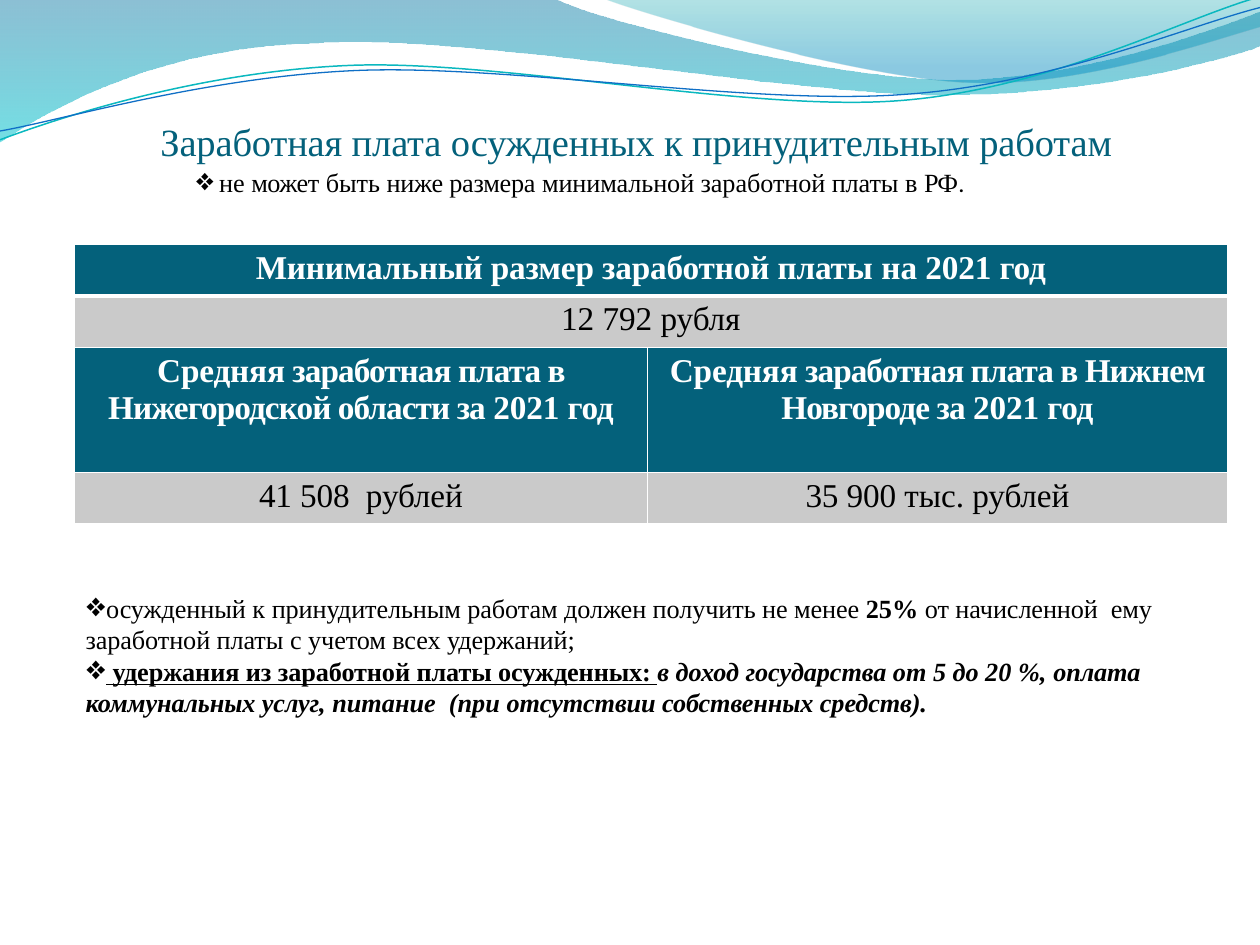
from dataclasses import dataclass, field
from typing import NamedTuple

import pptx
import pptx.dml.color
import pptx.enum.text
import pptx.oxml
import pptx.oxml.ns
import pptx.util

Inches, Pt = pptx.util.Inches, pptx.util.Pt
RGB = pptx.dml.color.RGBColor.from_string
qn = pptx.oxml.ns.qn
NAMESPACE = pptx.oxml.ns.nsdecls("a")
ALIGN = pptx.enum.text.PP_ALIGN
ANCHOR = pptx.enum.text.MSO_ANCHOR


@dataclass(frozen=True)
class Theme:
    font: str = "Times New Roman"
    stop_font: str = "Roboto"
    ink: str = "000000"
    accent: str = "04617B"
    value_fill: str = "CACACA"
    white: str = "FFFFFF"
    title_size: float = 22
    table_size: float = 19
    body_size: float = 15


THEME = Theme()


class Run(NamedTuple):
    text: str
    tracking: float = -0.05
    format: dict = {}


@dataclass(frozen=True)
class Paragraph:
    runs: list[Run]
    size: float = THEME.body_size
    color: str = THEME.ink
    align: ALIGN = ALIGN.LEFT
    space_before: float = 0
    margin: float = 0.01
    indent: float = 0
    bullet_scale: int = 0


class Stop(NamedTuple):
    position: float
    color: str
    opacity: int


@dataclass(frozen=True)
class Wave:
    """Segments hold either one line end or three Bezier points."""
    start: tuple
    segments: list[tuple]
    stops: list[Stop] = field(default_factory=list)
    line: tuple = ()


@dataclass(frozen=True)
class TableCell:
    row: int
    column: int
    runs: list[Run]
    header: bool = False
    span: int = 1


WAVES = [
    Wave((0, 0), [
        (4.4, -0.01), (4.76, 0.17, 6.64, 0.63, 7.58, 0.63),
        (8.53, 0.63, 9.58, 0.26, 10, 0.09), (10.01, 0.36),
        (9.83, 0.44, 8.7, 0.76, 7.46, 0.75), (6.22, 0.75, 3.82, 0.28, 2.57, 0.34),
        (1.29, 0.36, 0.46, 0.83, -0.01, 1.13), (0, 0)],
        stops=[Stop(0, "0074A1", 45), Stop(1, "00C6CF", 55)]),
    Wave((4.79, -0.01), [
        (5.09, 0.11, 6.82, 0.62, 7.69, 0.65), (8.56, 0.69, 9.61, 0.32, 10, 0.21),
        (10, 0), (4.79, -0.01)],
        stops=[Stop(0, "00A1A9", 30), Stop(0.8, "008BBF", 45)]),
    Wave((0, 1.11), [
        (0.48, 0.93, 1.58, 0.57, 2.77, 0.52), (3.95, 0.47, 5.93, 0.89, 7.13, 0.8),
        (8.33, 0.71, 9.38, 0.15, 9.98, -0.02)], line=("0AB8BF", 0.85)),
    Wave((0, 1.04), [
        (0.47, 0.96, 1.64, 0.61, 2.83, 0.56), (4.03, 0.51, 5.97, 0.84, 7.17, 0.75),
        (8.36, 0.67, 9.41, 0.21, 10, 0.06)], line=("0F6FC6", 0.75)),
]

BOLD = {"bold": True}
BOLD_ITALIC = {"bold": True, "italic": True}
TITLE = Paragraph([Run("Заработная плата осужденных к принудительным работам")],
                  THEME.title_size, THEME.accent, ALIGN.CENTER, 0.9)
MINIMUM_RULE = Paragraph([
    Run("не "), Run("может", -0.25), Run(" быть "), Run("ниже размера ", -0.15),
    Run("минимальной заработной платы "), Run("в ", 0), Run("РФ", -0.55),
    Run(".", -0.55, {"name": THEME.stop_font})],
    space_before=1, margin=0.2, indent=-0.19, bullet_scale=93)
DEDUCTIONS = [
    Paragraph([
        Run("осужденный "), Run("к ", 0),
        Run("принудительным работам должен получить не менее "), Run("25% ", 0, BOLD),
        Run("от начисленной  ему заработной платы"), Run(" с", 0),
        Run(" учетом всех удержаний;")], space_before=1, bullet_scale=100),
    Paragraph([
        Run(" ", format={"underline": True}),
        Run("удержания из заработной платы осужденных: ", format=BOLD | {"underline": True}),
        Run("в ", 0, BOLD_ITALIC), Run("доход государства ", format=BOLD_ITALIC),
        Run("от 5 ", 0, BOLD_ITALIC), Run("до ", format=BOLD_ITALIC),
        Run("20 ", 0, BOLD_ITALIC), Run("%, ", 0.05, BOLD_ITALIC),
        Run("оплата  коммунальных услуг, ", format=BOLD_ITALIC),
        Run("питание  (при ", 0, BOLD_ITALIC),
        Run("отсутствии собственных средств).", format=BOLD_ITALIC)], bullet_scale=100),
]

YEAR = [Run("2021 "), Run("год", -0.15)]
COLUMN_WIDTHS = (4.55, 4.6)
ROW_HEIGHTS = (0.41, 0.41, 0.99, 0.41)
WAGES = [
    TableCell(0, 0, [Run("Минимальный размер заработной платы "), Run("на ", 0), *YEAR], True, 2),
    TableCell(1, 0, [Run("12 792 ", 0), Run("рубля")], span=2),
    TableCell(2, 0, [Run("Средняя"),
                     Run(" заработная плата в Нижегородской области за ", -0.5), *YEAR], True),
    TableCell(2, 1, [Run("Средняя"),
                     Run(" заработная плата в Нижнем Новгороде за ", -0.5), *YEAR], True),
    TableCell(3, 0, [Run("41 508  рублей")]),
    TableCell(3, 1, [Run("35 900 "), Run("тыс.", 0), Run(" рублей")]),
]


def element(markup: str):
    """Parse one drawing element, adding the namespace to its first tag."""
    tag, rest = markup[1:].split(">", 1)
    slash = "/" if tag.endswith("/") else ""
    return pptx.oxml.parse_xml(f"<{tag.rstrip('/')} {NAMESPACE}{slash}>{rest}")


def add_wave_outline(slide, wave: Wave):
    """Lay out the segment ends as a freeform, then bend its curved segments."""
    builder = slide.shapes.build_freeform(*map(Inches, wave.start), scale=1.0)
    ends = [tuple(map(Inches, segment[-2:])) for segment in wave.segments]
    builder.add_line_segments(ends, close=bool(wave.stops))
    ribbon = builder.convert_to_shape()
    straight_parts = list(ribbon._element.spPr.iter(qn("a:lnTo")))
    for straight, segment in zip(straight_parts, wave.segments):
        if len(segment) == 6:
            points = "".join(
                f'<a:pt x="{Inches(x) - ribbon.left}" y="{Inches(y) - ribbon.top}"/>'
                for x, y in zip(segment[::2], segment[1::2]))
            straight.getparent().replace(
                straight, element(f"<a:cubicBezTo>{points}</a:cubicBezTo>"))
    return ribbon


def draw_wave(slide, wave: Wave) -> None:
    ribbon = add_wave_outline(slide, wave)
    ribbon.shadow.inherit = False
    if wave.line:
        ribbon.fill.background()
        color, width = wave.line
        ribbon.line.color.rgb = RGB(color)
        ribbon.line.width = Pt(width)
        return
    ribbon.line.fill.background()
    ribbon.fill.gradient()
    ribbon.fill.gradient_angle = 270
    for gradient_stop, stop in zip(ribbon.fill.gradient_stops, wave.stops):
        gradient_stop.position = stop.position
        gradient_stop.color.rgb = RGB(stop.color)
    for color, stop in zip(ribbon._element.spPr.iter(qn("a:srgbClr")), wave.stops):
        color.append(element(f'<a:alpha val="{stop.opacity * 1000}"/>'))


def write_paragraph(target, content: Paragraph) -> None:
    target.alignment = content.align
    target.space_before = Pt(content.space_before)
    properties = target._p.get_or_add_pPr()
    properties.set("marL", str(Inches(content.margin)))
    properties.set("indent", str(Inches(content.indent)))
    if content.bullet_scale:
        for markup in (f'<a:buSzPct val="{content.bullet_scale * 1000}"/>',
                       f'<a:buFont typeface="{THEME.font}"/>', '<a:buChar char="❖"/>'):
            properties.append(element(markup))
    for part in content.runs:
        run = target.add_run()
        run.text = part.text
        for name, value in ({"name": THEME.font, "size": Pt(content.size)} | part.format).items():
            setattr(run.font, name, value)
        run.font.color.rgb = RGB(content.color)
        run._r.get_or_add_rPr().set("spc", str(round(part.tracking * 100)))


def draw_text(slide, box: tuple, paragraphs: list[Paragraph], anchor=ANCHOR.TOP) -> None:
    frame = slide.shapes.add_textbox(*map(Inches, box)).text_frame
    layout = {"word_wrap": True, "vertical_anchor": anchor, "margin_left": 0, "margin_right": 0,
              "margin_top": Inches(0.01), "margin_bottom": 0,
              "auto_size": pptx.enum.text.MSO_AUTO_SIZE.SHAPE_TO_FIT_TEXT}
    for name, value in layout.items():
        setattr(frame, name, value)
    for index, content in enumerate(paragraphs):
        write_paragraph(frame.add_paragraph() if index else frame.paragraphs[0], content)


def draw_borders(cell, top: float, bottom: float) -> None:
    for side, width in (("L", 1), ("R", 1), ("T", top), ("B", bottom)):
        cell._tc.get_or_add_tcPr().append(element(
            f'<a:ln{side} w="{Pt(width)}"><a:solidFill>'
            f'<a:srgbClr val="{THEME.white}"/></a:solidFill></a:ln{side}>'))


def draw_wages(slide) -> None:
    box = (0.59, 1.94, sum(COLUMN_WIDTHS), sum(ROW_HEIGHTS))
    table = slide.shapes.add_table(len(ROW_HEIGHTS), len(COLUMN_WIDTHS), *map(Inches, box)).table
    table.first_row = table.horz_banding = False
    for column, width in zip(table.columns, COLUMN_WIDTHS):
        column.width = Inches(width)
    for row, height in zip(table.rows, ROW_HEIGHTS):
        row.height = Inches(height)
    for wage in WAGES:
        cell = table.cell(wage.row, wage.column)
        if wage.span > 1:
            cell.merge(table.cell(wage.row, wage.column + wage.span - 1))
        for offset in range(wage.span):
            part = table.cell(wage.row, wage.column + offset)
            draw_borders(part, 3 if wage.row == 1 else 1, 3 if wage.row == 0 else 1)
            part.fill.solid()
            part.fill.fore_color.rgb = RGB(THEME.accent if wage.header else THEME.value_fill)
        cell.margin_left = cell.margin_right = cell.margin_bottom = 0
        cell.margin_top = Inches(0.04)
        runs = [run._replace(format={"bold": wage.header}) for run in wage.runs]
        write_paragraph(cell.text_frame.paragraphs[0], Paragraph(
            runs, THEME.table_size, THEME.white if wage.header else THEME.ink,
            ALIGN.CENTER, 2.3, margin=0))


def main() -> None:
    deck = pptx.Presentation()
    deck.slide_width, deck.slide_height = Inches(10), Inches(7.5)
    slide = deck.slides.add_slide(deck.slide_layouts[6])
    for wave in WAVES:
        draw_wave(slide, wave)
    draw_text(slide, (0.67, 4.69, 8.9, 1.02), DEDUCTIONS)
    draw_wages(slide)
    draw_text(slide, (1.54, 1.31, 6.84, 0.27), [MINIMUM_RULE])
    draw_text(slide, (0.51, 0.92, 9.07, 0.38), [TITLE], ANCHOR.BOTTOM)
    deck.save("out.pptx")


if __name__ == "__main__":
    main()
